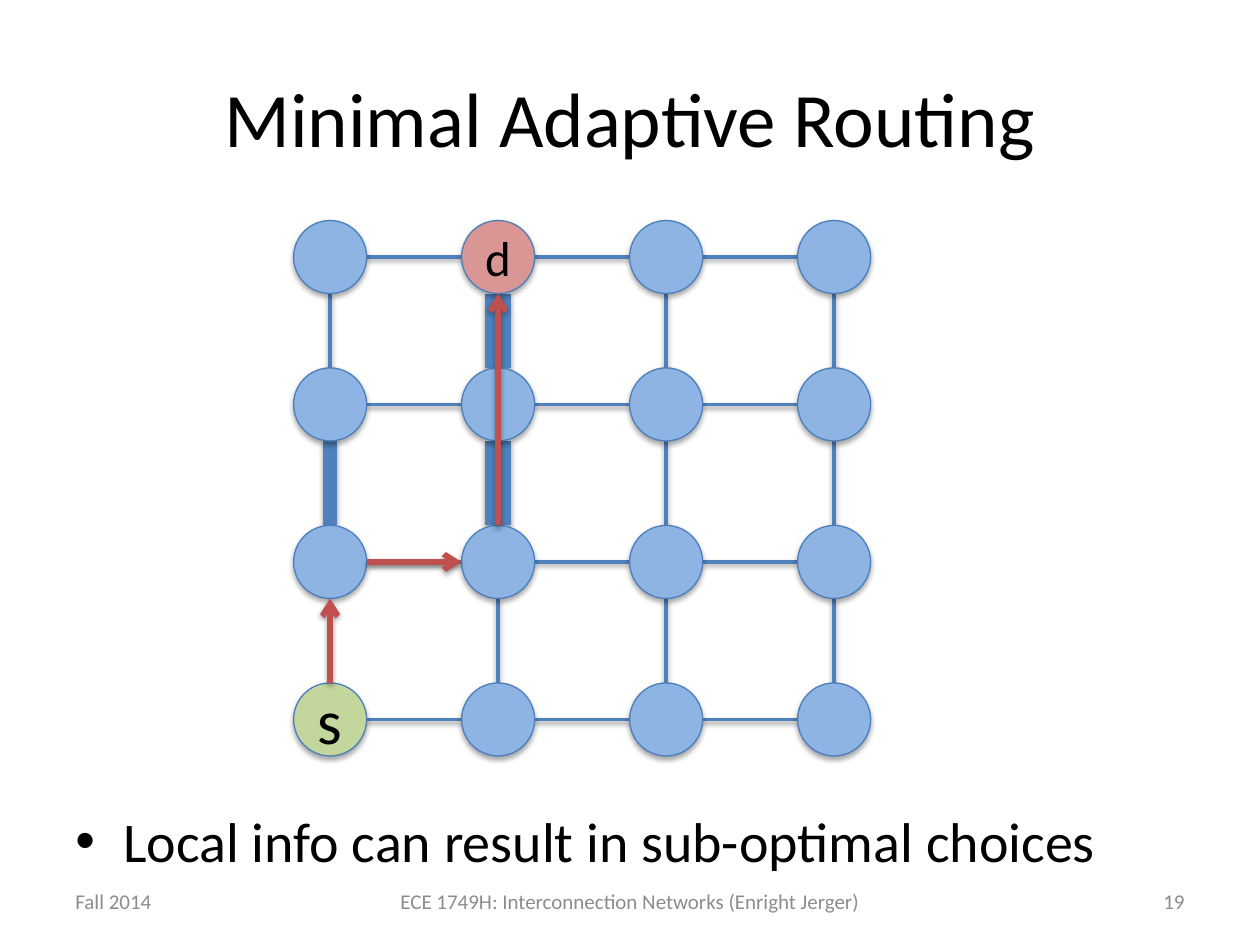
from lxml.etree import SubElement
from pptx import Presentation
from pptx.dml.color import RGBColor
from pptx.enum.shapes import MSO_CONNECTOR, MSO_SHAPE
from pptx.enum.text import MSO_ANCHOR as Anchor, PP_ALIGN as Align
from pptx.oxml.ns import qn
from pptx.util import Inches, Pt

COLORS = {
    "text": "000000",
    "footer": "8C8C8C",
    "node": "8EB4E3",
    "source": "C3D69B",
    "destination": "D99694",
    "outline": "4B7EBC",
    "link": "4F81BD",
    "route": "C0504D",
}
FONT = "Calibri"
NODE_SIZE = 0.58
COLUMN_OFFSETS = [column * 4 / 3 for column in range(4)]
ROW_OFFSETS = [0, 1.17, 2.42, 3.67]
SOURCE, DESTINATION = (0, 3), (1, 0)
SPECIAL_NODES = {SOURCE: ("s", 36, "source"), DESTINATION: ("d", 28, "destination")}
CONGESTION = {((0, 1), (0, 2)): 8, ((1, 0), (1, 1)): 15, ((1, 1), (1, 2)): 15}
ROUTE = [SOURCE, (0, 2), (1, 2), DESTINATION]
ROUTED_LINKS = [((0, 2), (0, 3))]


def color(name):
    return RGBColor.from_string(COLORS[name])


def add_shadow(part, opacity, distance):
    effects = SubElement(part._element.spPr, qn("a:effectLst"))
    shadow = SubElement(effects, qn("a:outerShdw"), blurRad=str(Pt(3.1)),
                        dist=str(Pt(distance)), dir="5400000", rotWithShape="0")
    black = SubElement(shadow, qn("a:srgbClr"), val="000000")
    SubElement(black, qn("a:alpha"), val=str(opacity * 1000))


def write(frame, text, size, tone="text", align=Align.LEFT, anchor=Anchor.MIDDLE):
    frame.word_wrap = True
    frame.vertical_anchor = anchor
    frame.text = text
    paragraph = frame.paragraphs[0]
    paragraph.alignment = align
    font = paragraph.runs[0].font
    font.name, font.size = FONT, Pt(size)
    font.color.rgb = color(tone)
    return paragraph


def add_text(slide, box, *args, **kwargs):
    textbox = slide.shapes.add_textbox(*map(Inches, box))
    return write(textbox.text_frame, *args, **kwargs)


def add_takeaway(slide, box):
    paragraph = add_text(slide, box, "Local info can result in sub-optimal choices",
                         32, anchor=Anchor.TOP)
    properties = paragraph._p.get_or_add_pPr()
    properties.set("marL", str(Inches(0.38)))
    properties.set("indent", str(Inches(-0.38)))
    spacing = SubElement(properties, qn("a:spcBef"))
    SubElement(spacing, qn("a:spcPct"), val="20000")
    SubElement(properties, qn("a:buFont"), typeface="Arial")
    SubElement(properties, qn("a:buChar"), char="•")


def add_link(slide, start, end, tone, width, arrow=False):
    link = slide.shapes.add_connector(MSO_CONNECTOR.STRAIGHT, *map(Inches, (*start, *end)))
    link.line.color.rgb = color(tone)
    link.line.width = Pt(width)
    if arrow:
        SubElement(link.line._get_or_add_ln(), qn("a:tailEnd"), type="arrow")
    add_shadow(link, 38, 1.6)


def add_node(slide, center, label, size, tone):
    x, y = center
    node = slide.shapes.add_shape(
        MSO_SHAPE.OVAL, Inches(x - NODE_SIZE / 2), Inches(y - NODE_SIZE / 2),
        Inches(NODE_SIZE), Inches(NODE_SIZE))
    node.fill.solid()
    node.fill.fore_color.rgb = color(tone)
    node.line.color.rgb = color("outline")
    node.line.width = Pt(0.75)
    node.shadow.inherit = False
    node._element.spPr.remove(node._element.spPr.find(qn("a:effectLst")))
    add_shadow(node, 35, 1.8)
    if label:
        write(node.text_frame, label, size, align=Align.CENTER)


def add_mesh(slide, left, top):
    radius = NODE_SIZE / 2
    centers = {(column, row): (left + dx + radius, top + dy + radius)
               for row, dy in enumerate(ROW_OFFSETS)
               for column, dx in enumerate(COLUMN_OFFSETS)}

    def edge_points(start, end):
        (x1, y1), (x2, y2) = centers[start], centers[end]
        step_x = radius * ((x2 > x1) - (x2 < x1))
        step_y = radius * ((y2 > y1) - (y2 < y1))
        return (x1 + step_x, y1 + step_y), (x2 - step_x, y2 - step_y)

    for column, row in centers:
        for neighbor in ((column + 1, row), (column, row + 1)):
            hop = ((column, row), neighbor)
            if neighbor in centers and hop not in ROUTED_LINKS:
                add_link(slide, *edge_points(*hop), "link", CONGESTION.get(hop, 2))
    for position, center in centers.items():
        add_node(slide, center, *SPECIAL_NODES.get(position, ("", 0, "node")))
    for start, end in zip(ROUTE, ROUTE[1:]):
        add_link(slide, *edge_points(start, end), "route", 3.25, arrow=True)


def add_footer(slide, left, top, width, height):
    side = 2.33
    columns = [
        ("Fall 2014", 0, side, Align.LEFT),
        ("ECE 1749H: Interconnection Networks (Enright Jerger)",
         side, width - 2 * side, Align.CENTER),
        ("19", width - side, side, Align.RIGHT),
    ]
    for text, offset, span, align in columns:
        add_text(slide, (left + offset, top, span, height), text, 12, "footer", align)


def main():
    deck = Presentation()
    deck.slide_width, deck.slide_height = Inches(10), Inches(7.5)
    slide = deck.slides.add_slide(deck.slide_layouts[6])
    add_text(slide, (0.5, 0.3, 9, 1.25), "Minimal Adaptive Routing", 44, align=Align.CENTER)
    add_mesh(slide, 2.33, 1.75)
    add_takeaway(slide, (0.5, 6.35, 9, 0.62))
    add_footer(slide, 0.5, 6.95, 9, 0.4)
    deck.save("out.pptx")


if __name__ == "__main__":
    main()
